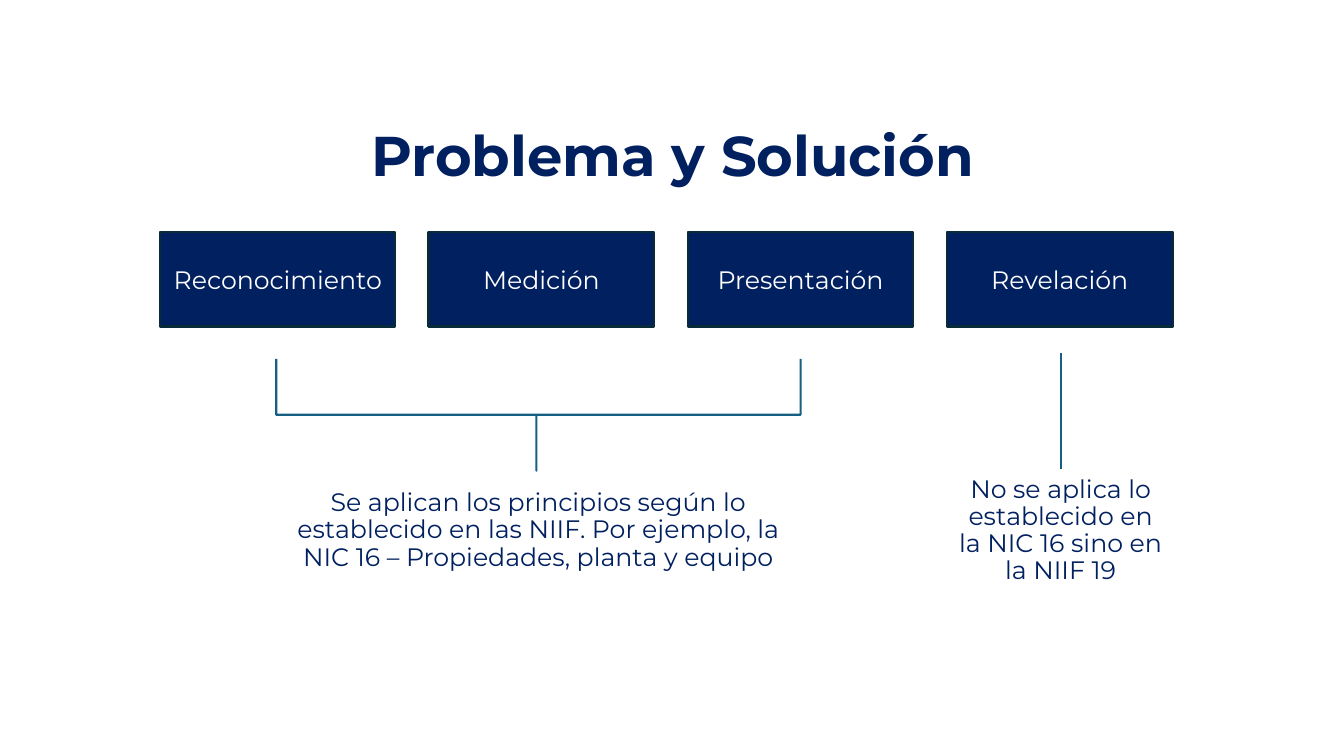
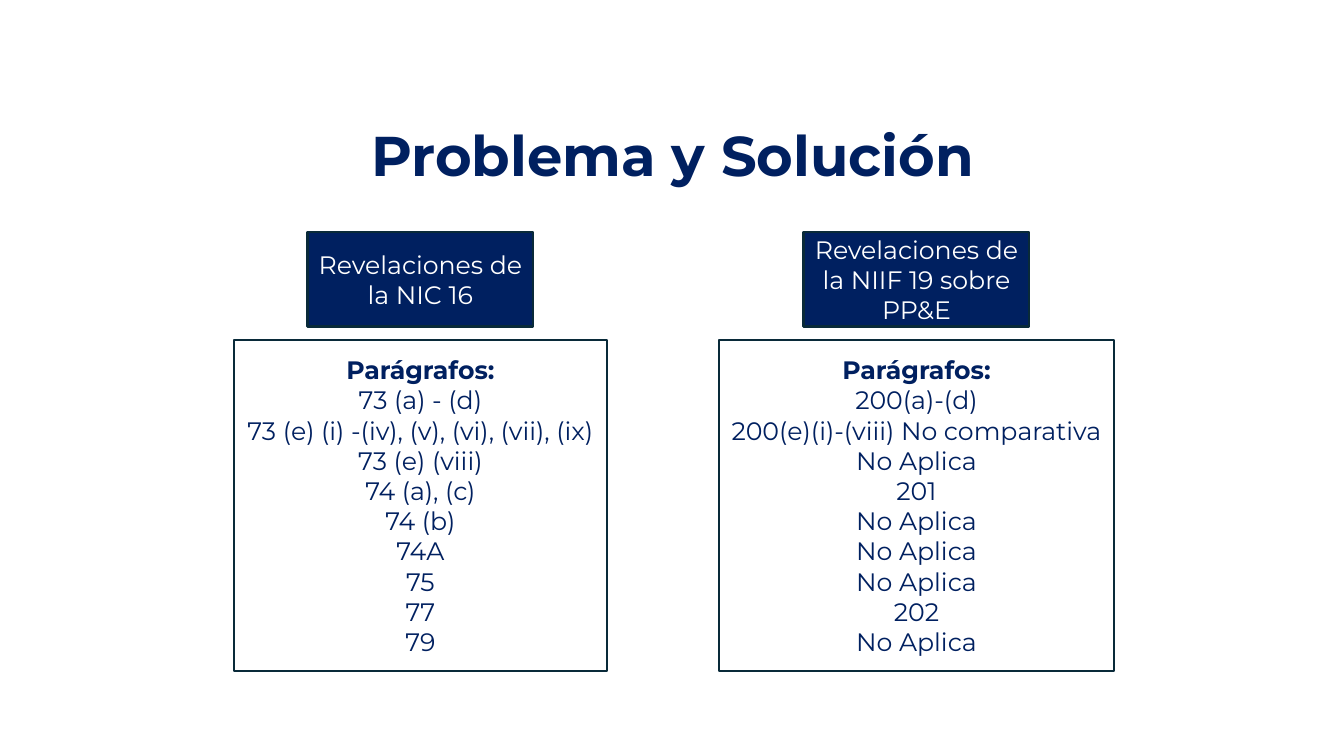
from collections import namedtuple

from pptx import Presentation
from pptx.dml.color import RGBColor
from pptx.enum.shapes import MSO_CONNECTOR as Connector, MSO_SHAPE as Shape
from pptx.enum.text import MSO_ANCHOR as Anchor, PP_ALIGN as Align
from pptx.oxml.ns import qn
from pptx.util import Pt
from lxml.etree import SubElement

PX = 9144
FONT = "Montserrat"
NAVY = RGBColor(0x00, 0x20, 0x60)
EDGE = RGBColor(0x09, 0x2A, 0x39)
TEAL = RGBColor(0x15, 0x60, 0x82)
WHITE = RGBColor(0xFF, 0xFF, 0xFF)
LINE_WIDTH = Pt(1.5)
HEADER_WIDTH, HEADER_HEIGHT = 224, 94

Box = namedtuple("Box", "left top width height")
TITLE_BOX = Box(53, 85, 1228, 145)


def emu(box):
    return [round(length * PX) for length in box]


def write(frame, lines, color, size=18, bold_first=False, spacing=None):
    frame.word_wrap = True
    frame.vertical_anchor = Anchor.MIDDLE
    for index, line in enumerate(lines):
        para = frame.paragraphs[0] if index == 0 else frame.add_paragraph()
        para.alignment = Align.CENTER
        if spacing:
            para.line_spacing = spacing
        span = para.add_run()
        span.text = line
        span.font.name = FONT
        span.font.size = Pt(size)
        span.font.bold = bold_first and index == 0
        span.font.color.rgb = color


def outline(shape, color):
    shape.line.color.rgb = color
    shape.line.width = LINE_WIDTH


def add_page(deck, title):
    page = deck.slides.add_slide(deck.slide_layouts[5])
    heading = page.shapes.title
    heading.left, heading.top, heading.width, heading.height = emu(TITLE_BOX)
    write(heading.text_frame, [title], NAVY, 40, bold_first=True, spacing=0.9)
    return page


def add_panel(page, box, lines, fill, color, bold_first=False):
    panel = page.shapes.add_shape(Shape.RECTANGLE, *emu(box))
    panel.shadow.inherit = False
    panel.fill.solid()
    panel.fill.fore_color.rgb = fill
    outline(panel, EDGE)
    write(panel.text_frame, lines, color, bold_first=bold_first)


def add_header(page, box, label):
    add_panel(page, box, [label], NAVY, WHITE)


def add_note(page, box, text):
    note = page.shapes.add_textbox(*emu(box))
    write(note.text_frame, [text], NAVY, spacing=0.9)


def add_stages(page, box, labels, first_width, gap):
    left = box.left
    for index, label in enumerate(labels):
        width = HEADER_WIDTH if index else first_width
        add_header(page, Box(left, box.top, width, box.height), label)
        left += width + gap


def add_brace(page, box):
    center_x = box.left + box.width / 2
    center_y = box.top + box.height / 2
    upright = Box(center_x - box.height / 2, center_y - box.width / 2, box.height, box.width)
    brace = page.shapes.add_shape(Shape.RIGHT_BRACE, *emu(upright))
    brace.rotation = 90
    brace.adjustments[0] = 0
    brace.adjustments[1] = 0.504
    brace.shadow.inherit = False
    brace.fill.background()
    outline(brace, TEAL)


def add_stem(page, x, top, bottom):
    stem = page.shapes.add_connector(Connector.STRAIGHT, *emu((x, top, x, bottom)))
    outline(stem, TEAL)
    SubElement(stem._element.spPr, qn("a:effectLst"))


def add_braced_note(page, box, text):
    add_brace(page, Box(box.left, box.top, box.width, 111))
    add_note(page, Box(box.left, box.top + 115, box.width, 111), text)


def add_stemmed_note(page, box, text):
    add_stem(page, box.left + box.width / 2, box.top, box.top + 115)
    add_note(page, Box(box.left, box.top + 121, box.width, 111), text)


def add_column(page, box, label, paragraphs):
    header_left = box.left + (box.width - HEADER_WIDTH) / 2
    add_header(page, Box(header_left, box.top, HEADER_WIDTH, HEADER_HEIGHT), label)
    offset = HEADER_HEIGHT + 13
    panel = Box(box.left, box.top + offset, box.width, box.height - offset)
    add_panel(page, panel, ["Parágrafos:", *paragraphs], WHITE, NAVY, bold_first=True)


def build_stages_page(deck):
    page = add_page(deck, "Problema y Solución")
    stages = ["Reconocimiento", "Medición", "Presentación", "Revelación"]
    add_stages(page, Box(159, 230, 1005, HEADER_HEIGHT), stages, 233, 33)
    add_braced_note(
        page, Box(274, 356, 520, 226),
        "Se aplican los principios según lo establecido en las NIIF. "
        "Por ejemplo, la NIC 16 – Propiedades, planta y equipo")
    add_stemmed_note(
        page, Box(940, 350, HEADER_WIDTH, 232),
        "No se aplica lo establecido en la NIC 16 sino en la NIIF 19")


def build_disclosures_page(deck):
    page = add_page(deck, "Problema y Solución")
    add_column(page, Box(232, 230, 370, 436), "Revelaciones de la NIC 16", [
        "73 (a) - (d)", "73 (e) (i) -(iv), (v), (vi), (vii), (ix)", "73 (e) (viii)",
        "74 (a), (c)", "74 (b)", "74A", "75", "77", "79"])
    add_column(page, Box(713, 230, 392, 436), "Revelaciones de la NIIF 19 sobre PP&E", [
        "200(a)-(d)", "200(e)(i)-(viii) No comparativa", "No Aplica",
        "201", "No Aplica", "No Aplica", "No Aplica", "202", "No Aplica"])


def main():
    deck = Presentation()
    deck.slide_width, deck.slide_height = emu((1333, 750))
    build_stages_page(deck)
    build_disclosures_page(deck)
    deck.save("out.pptx")


if __name__ == "__main__":
    main()
